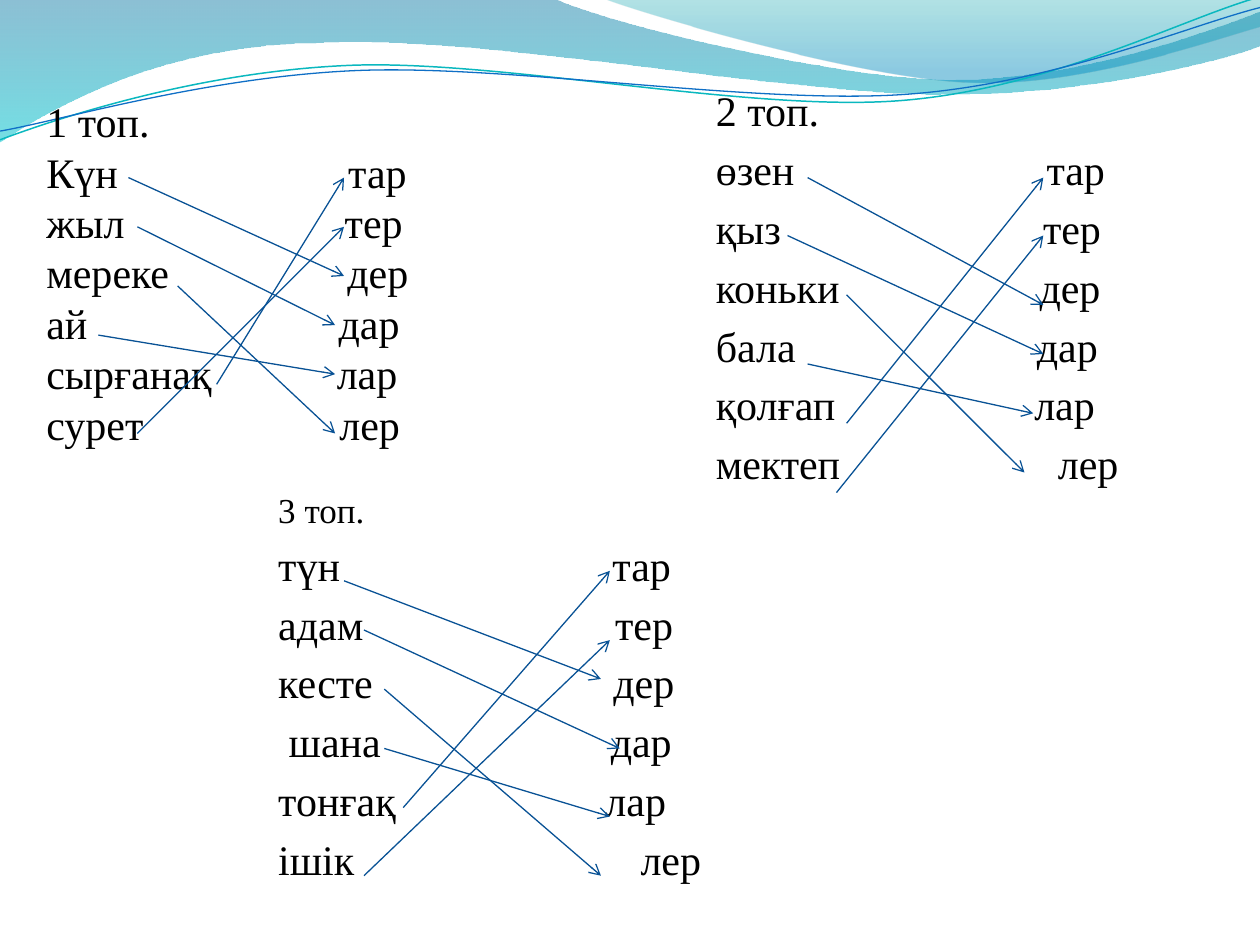
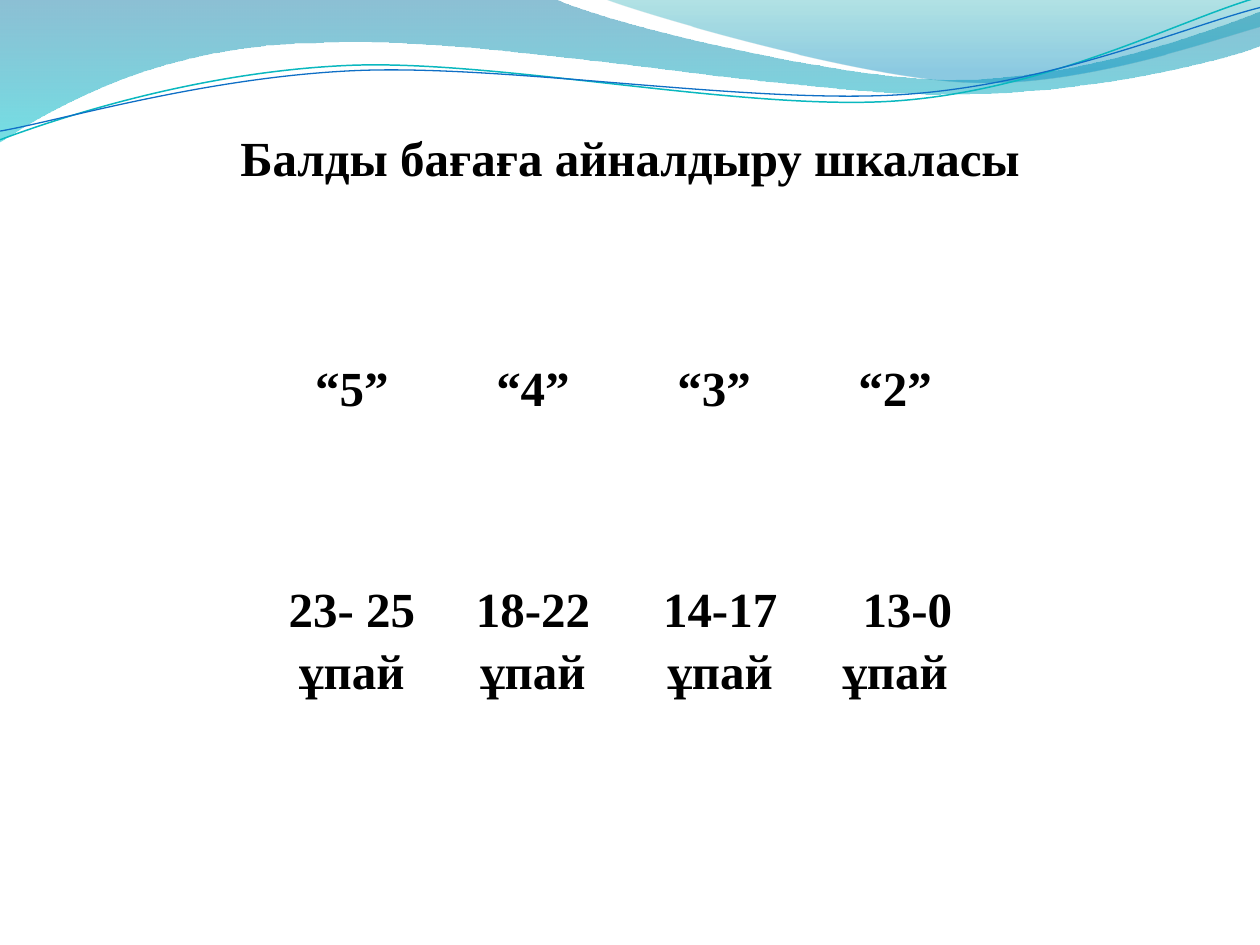
from pptx import Presentation
from pptx import util as u
from pptx.dml.color import RGBColor
from pptx.enum import shapes, text
from pptx.oxml.ns import qn
from pptx.oxml.xmlchemy import OxmlElement

Pt = u.Pt
FONT = "Times New Roman"
LINE_RATIO = 1.2
COLORS = {"text": "000000", "arrow": "095295", "border": "FFFFFF",
          "teal_line": "0AB8BF", "blue_line": "0F6FC6"}

# Each segment lists x, y pairs: one pair is a line, three pairs are a curve.
WAVES = [
    {"start": (0, -0.7), "closed": True,
     "segments": [(316.8, -0.7), (342.7, 12.2, 478.1, 45.4, 545.8, 45.4),
                  (614.2, 45.4, 689.8, 18.7, 720, 6.5), (720.7, 25.9),
                  (707.8, 31.7, 626.4, 54.7, 537.1, 54),
                  (447.8, 54, 275, 20.2, 185, 24.5),
                  (92.9, 25.2, 33.1, 59.8, -0.7, 81.4)],
     "stops": [(0, "0074A1", 45), (1, "00C6CF", 55)]},
    {"start": (344.9, -0.7), "closed": True,
     "segments": [(366.5, 7.9, 491, 44.6, 553.7, 46.8),
                  (616.3, 49.7, 691.9, 23, 720, 15.1), (720, 0)],
     "stops": [(0, "00A1A9", 30), (0.8, "008BBF", 45)]},
    {"start": (0, 79.9), "closed": False,
     "segments": [(34.6, 67, 113.8, 41, 199.4, 37.4),
                  (284.4, 33.8, 427, 64.1, 513.4, 57.6),
                  (599.8, 51.1, 675.4, 10.8, 718.6, -1.4)],
     "line": ("teal_line", 0.85)},
    {"start": (0, 74.9), "closed": False,
     "segments": [(33.8, 69.1, 118.1, 43.9, 203.8, 40.3),
                  (290.2, 36.7, 429.8, 59.8, 516.2, 54),
                  (601.9, 48.2, 677.5, 15.1, 720, 4.3)],
     "line": ("blue_line", 0.75)},
]

# Rows: word, ending, tab position of the ending, arrow that leaves the word.
GROUPS = [
    {"heading": "2 топ.", "heading_size": 24, "box": (401.8, 44.9, 318.2, 230.4),
     "gap": 4.8, "placeholder": True,
     "rows": [("өзен", "тар", 189, (461.5, 101.5, 596.2, 174.2)),
              ("қыз", "тер", 187, (450, 134.6, 596.2, 202.3)),
              ("коньки", "дер", 185, (483.8, 168.5, 585.4, 270)),
              ("бала", "дар", 183.5, (461.5, 208, 590.4, 236.2)),
              ("қолғап", "лар", 182, (483.8, 241.9, 596.2, 101.5)),
              ("мектеп", "лер", 195.5, (478, 281.5, 596.2, 134.6))]},
    {"heading": "1 топ.", "heading_size": 24, "box": (19.4, 51.1, 344.9, 211),
     "gap": 0, "placeholder": False,
     "rows": [("Күн", "тар", 172.5, (73.4, 101.5, 196.6, 157.7)),
              ("жыл", "тер", 170.5, (78.5, 129.6, 191.5, 185.8)),
              ("мереке", "дер", 172, (101.5, 163.4, 191.5, 247.7)),
              ("ай", "дар", 167, (56.2, 191.5, 191.5, 213.8)),
              ("сырғанақ", "лар", 166, (123.8, 219.6, 196.6, 101.5)),
              ("сурет", "лер", 167.5, (78.5, 247.7, 196.6, 129.6))]},
    {"heading": "3 топ.", "heading_size": 20, "box": (151.9, 275.8, 337, 259.2),
     "gap": 4.8, "placeholder": False,
     "rows": [("түн", "тар", 191, (196.6, 331.9, 343.4, 388)),
              ("адам", "тер", 192.5, (208, 360, 354.2, 427.7)),
              ("кесте", "дер", 191.5, (219.6, 393.8, 343.4, 500.4)),
              (" шана", "дар", 190, (219.6, 427.7, 348.5, 466.6)),
              ("тонғақ", "лар", 187, (230.4, 461.5, 348.5, 326.2)),
              ("ішік", "лер", 207, (208, 500.4, 348.5, 365.8))]},
]

TITLE = "Балды бағаға айналдыру шкаласы"
TITLE_BOX = (80.3, 69.1, 559.4, 63.4)
SCALE = [
    [["“5” "], ["“4” "], ["“3” "], ["“2” "]],
    [["23- 25 ", "ұпай "], ["18-22 ", "ұпай "], ["14-17", "ұпай"], [" 13-0", "ұпай "]],
]
SCALE_BOX = (152.8, 199.2, 414, 252)


def rgb(name):
    return RGBColor.from_string(COLORS.get(name, name))


def add_child(parent, tag, **attrs):
    child = OxmlElement(tag)
    for key, value in attrs.items():
        child.set(key, str(value))
    parent.append(child)
    return child


def write(tf, content, size=24, bold=False, align=text.PP_ALIGN.LEFT,
          spacing=None, before=0, tab=None):
    """Add a paragraph, using the empty first one if there is one."""
    p = tf.paragraphs[0]
    if p.runs:
        p = tf.add_paragraph()
    p.alignment = align
    p.line_spacing = spacing or Pt(size * LINE_RATIO)
    p.space_before, p.space_after = Pt(before), Pt(0)
    pPr = p._p.get_or_add_pPr()
    pPr.set("marL", "0")
    pPr.set("indent", "0")
    add_child(pPr, "a:buNone")
    if tab:
        pPr.set("defTabSz", str(Pt(tab)))
    r = p.add_run()
    r.text = content
    r.font.name, r.font.size, r.font.bold = FONT, Pt(size), bold
    r.font.color.rgb = rgb("text")


def place(sp, box):
    sp.left, sp.top, sp.width, sp.height = map(Pt, box)
    tf = sp.text_frame
    tf.word_wrap = True
    tf.auto_size = text.MSO_AUTO_SIZE.NONE
    tf.vertical_anchor = text.MSO_ANCHOR.TOP
    return tf


def bend(sp, segments):
    """Turn each run of three points that belongs to a curve into a Bezier."""
    points = iter(list(sp._element.iter(qn("a:lnTo"))))
    for segment in segments:
        group = [next(points) for _ in range(len(segment) // 2)]
        if len(group) == 3:
            curve = OxmlElement("a:cubicBezTo")
            group[0].addprevious(curve)
            for node in group:
                curve.append(node[0])
                node.getparent().remove(node)


def add_wave(slide, master, wave):
    builder = slide.shapes.build_freeform(*map(Pt, wave["start"]), scale=1.0)
    points = [(Pt(s[i]), Pt(s[i + 1])) for s in wave["segments"]
              for i in range(0, len(s), 2)]
    builder.add_line_segments(points, close=wave["closed"])
    sp = builder.convert_to_shape()
    bend(sp, wave["segments"])
    sp.shadow.inherit = False
    if "stops" in wave:
        sp.fill.gradient()
        sp.fill.gradient_angle = 270
        for stop, (position, color, _) in zip(sp.fill.gradient_stops, wave["stops"]):
            stop.position = position
            stop.color.rgb = rgb(color)
        for node, (_, _, alpha) in zip(sp._element.iter(qn("a:srgbClr")), wave["stops"]):
            add_child(node, "a:alpha", val=alpha * 1000)
        sp.line.fill.background()
    else:
        color, width = wave["line"]
        sp.fill.background()
        sp.line.color.rgb = rgb(color)
        sp.line.width = Pt(width)
    master.shapes.element.append(sp._element)


def add_arrow(slide, ends):
    line = slide.shapes.add_connector(shapes.MSO_CONNECTOR.STRAIGHT, *map(Pt, ends))
    line.line.color.rgb = rgb("arrow")
    line.line.width = Pt(0.75)
    add_child(line.line._get_or_add_ln(), "a:tailEnd", type="arrow")
    add_child(line._element.spPr, "a:effectLst")


def add_group(slide, group):
    if group["placeholder"]:
        sp = slide.placeholders[1]
    else:
        sp = slide.shapes.add_textbox(0, 0, 0, 0)
    tf = place(sp, group["box"])
    write(tf, group["heading"], size=group["heading_size"])
    for word, ending, tab, _ in group["rows"]:
        write(tf, f"{word}\t{ending}", before=group["gap"], tab=tab)


def add_scale(slide):
    frame = slide.shapes.add_table(len(SCALE), len(SCALE[0]), *map(Pt, SCALE_BOX))
    table = frame.table
    table.first_row = table.horz_banding = False
    for row, cells in enumerate(SCALE):
        for col, lines in enumerate(cells):
            cell = table.cell(row, col)
            for content in lines:
                write(cell.text_frame, content, size=28, bold=True,
                      align=text.PP_ALIGN.CENTER, spacing=1.15)
            tcPr = cell._tc.get_or_add_tcPr()
            inner_side = "B" if row == 0 else "T"
            for side in "LRTB":
                width = 3 if side == inner_side else 1
                ln = add_child(tcPr, f"a:ln{side}", w=Pt(width))
                add_child(add_child(ln, "a:solidFill"), "a:srgbClr", val=COLORS["border"])
            cell.fill.background()


def main():
    prs = Presentation()
    prs.slide_width, prs.slide_height = Pt(720), Pt(540)

    matching = prs.slides.add_slide(prs.slide_layouts[1])
    title = matching.shapes.title._element
    title.getparent().remove(title)
    for wave in WAVES:
        add_wave(matching, prs.slide_master, wave)
    for group in GROUPS:
        add_group(matching, group)
    for group in GROUPS:
        for *_, ends in group["rows"]:
            add_arrow(matching, ends)

    grading = prs.slides.add_slide(prs.slide_layouts[5])
    add_scale(grading)
    write(place(grading.shapes.title, TITLE_BOX), TITLE, size=28, bold=True,
          align=text.PP_ALIGN.CENTER)

    prs.save("out.pptx")


if __name__ == "__main__":
    main()
